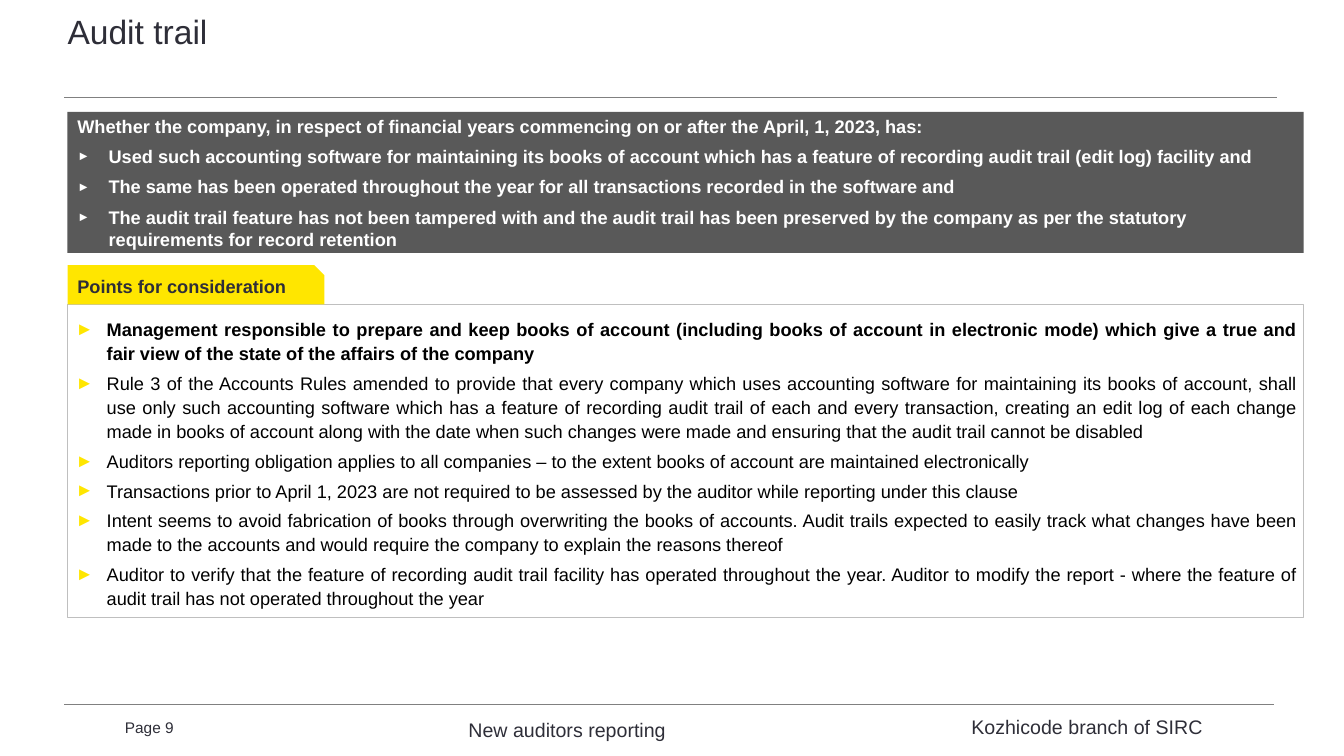
from pptx import Presentation, util as u
from pptx.dml.color import RGBColor
from pptx.enum import shapes, text
from pptx.oxml.ns import qn
from lxml import etree

TITLE = "Audit trail"
LEAD = "Whether the company, in respect of financial years commencing on or after the April, 1, 2023, has:"
TESTS = [
    "Used such accounting software for maintaining its books of account which has a feature of recording audit trail (edit log) facility and",
    "The same has been operated throughout the year for all transactions recorded in the software and",
    "The audit trail feature has not been tampered with and the audit trail has been preserved by the company as per the statutory requirements for record retention",
]
TAB = "Points for consideration"
KEY = "Management responsible to prepare and keep books of account (including books of account in electronic mode) which give a true and fair view of the state of the affairs of the company"
POINTS = [
    "Rule 3 of the Accounts Rules amended to provide that every company which uses accounting software for maintaining its books of account, shall use only such accounting software which has a feature of recording audit trail of each and every transaction, creating an edit log of each change made in books of account along with the date when such changes were made and ensuring that the audit trail cannot be disabled",
    "Auditors reporting obligation applies to all companies – to the extent books of account are maintained electronically",
    "Transactions prior to April 1, 2023 are not required to be assessed by the auditor while reporting under this clause",
    "Intent seems to avoid fabrication of books through overwriting the books of accounts. Audit trails expected to easily track what changes have been made to the accounts and would require the company to explain the reasons thereof",
    "Auditor to verify that the feature of recording audit trail facility has operated throughout the year. Auditor to modify the report - where the feature of audit trail has not operated throughout the year",
]
PAGE = "Page 9"
TOPIC = "New auditors reporting"
HOST = "Kozhicode branch of SIRC"


class Theme:
    font = "Arial"
    ink, black, white = "2E2E38", "000000", "FFFFFF"
    dark, gold, rule, edge = "595959", "FFE600", "808080", "BFBFBF"
    title, foot, body, page = 24, 14, 13, 11


PX = 9144
LEFT, WIDE = 67, 1227
RULES = [(64, 97, 1268), (64, 699, 1265)]
HANG = 31


def px(n):
    return u.Emu(n * PX)


def rgb(code):
    return RGBColor.from_string(code)


def rule(x, y, end):
    line = slide.shapes.add_connector(shapes.MSO_CONNECTOR.STRAIGHT, px(x), px(y), px(end), px(y))
    line.line.color.rgb = rgb(Theme.rule)
    line.line.width = u.Pt(0.75)
    etree.SubElement(line._element.spPr, qn("a:effectLst"))


def panel(kind, box, fill=None, edge=None):
    shape = slide.shapes.add_shape(kind, *map(px, box))
    shape.shadow.inherit = False
    for part, color in ((shape.fill, fill), (shape.line.fill, edge)):
        if color:
            part.solid()
            part.fore_color.rgb = rgb(color)
        else:
            part.background()
    if edge:
        shape.line.width = u.Pt(0.75)
    return shape


def label(box):
    return slide.shapes.add_textbox(*map(px, box))


def frame(shape, inset=(10, 5, 10, 5), anchor="TOP"):
    body = shape.text_frame
    body.word_wrap = True
    body.vertical_anchor = text.MSO_ANCHOR[anchor]
    body.margin_left, body.margin_top, body.margin_right, body.margin_bottom = map(px, inset)
    return body


def bullet(para, color, size):
    props = para._p.get_or_add_pPr()
    props.set("marL", str(px(HANG)))
    props.set("indent", str(-px(HANG)))
    tint = etree.SubElement(props, qn("a:buClr"))
    etree.SubElement(tint, qn("a:srgbClr"), val=color)
    etree.SubElement(props, qn("a:buSzPct"), val=str(size * 1000))
    etree.SubElement(props, qn("a:buFont"), typeface=Theme.font)
    etree.SubElement(props, qn("a:buChar"), char="►")


def write(body, words, size=Theme.body, color=Theme.ink, bold=False,
          align="LEFT", after=0, lead=1.0, mark=None, scale=100):
    para = body.paragraphs[0]
    if para.runs:
        para = body.add_paragraph()
    para.alignment = text.PP_ALIGN[align]
    para.space_after = u.Pt(after)
    para.line_spacing = lead
    run = para.add_run()
    run.text = words
    run.font.name = Theme.font
    run.font.size = u.Pt(size)
    run.font.bold = bold
    run.font.color.rgb = rgb(color)
    if mark:
        bullet(para, mark, scale)


deck = Presentation()
deck.slide_width, deck.slide_height = px(1334), px(750)
slide = deck.slides.add_slide(deck.slide_layouts[6])

for ends in RULES:
    rule(*ends)

write(frame(label((394, 707, 338, 20))), TOPIC, size=Theme.foot, align="CENTER")
write(frame(label((124, 708, 73, 20)), inset=(0, 5, 10, 5)), PAGE, size=Theme.page)
write(frame(label((910, 704, 338, 20))), HOST, size=Theme.foot, align="CENTER")
write(frame(label((LEFT, 17, 1201, 65)), inset=(0, 0, 0, 0)), TITLE, size=Theme.title, lead=0.85)

kinds = shapes.MSO_SHAPE
main = panel(kinds.RECTANGLE, (LEFT, 302, WIDE, 311), edge=Theme.edge)
body = frame(main, inset=(8, 12, 8, 8))
for words in [KEY] + POINTS:
    write(body, words, color=Theme.black, bold=words == KEY, align="JUSTIFY",
          after=4, lead=1.1, mark=Theme.gold)

head = panel(kinds.RECTANGLE, (LEFT, 111, WIDE, 140), fill=Theme.dark)
body = frame(head, anchor="MIDDLE")
for words in [LEAD] + TESTS:
    write(body, words, color=Theme.white, bold=True, after=6,
          mark=None if words == LEAD else Theme.white, scale=70)

tab = panel(kinds.SNIP_1_RECTANGLE, (LEFT, 263, 255, 39), fill=Theme.gold)
tab.adjustments[0] = 0.26
write(frame(tab), TAB, bold=True)

deck.save("out.pptx")
